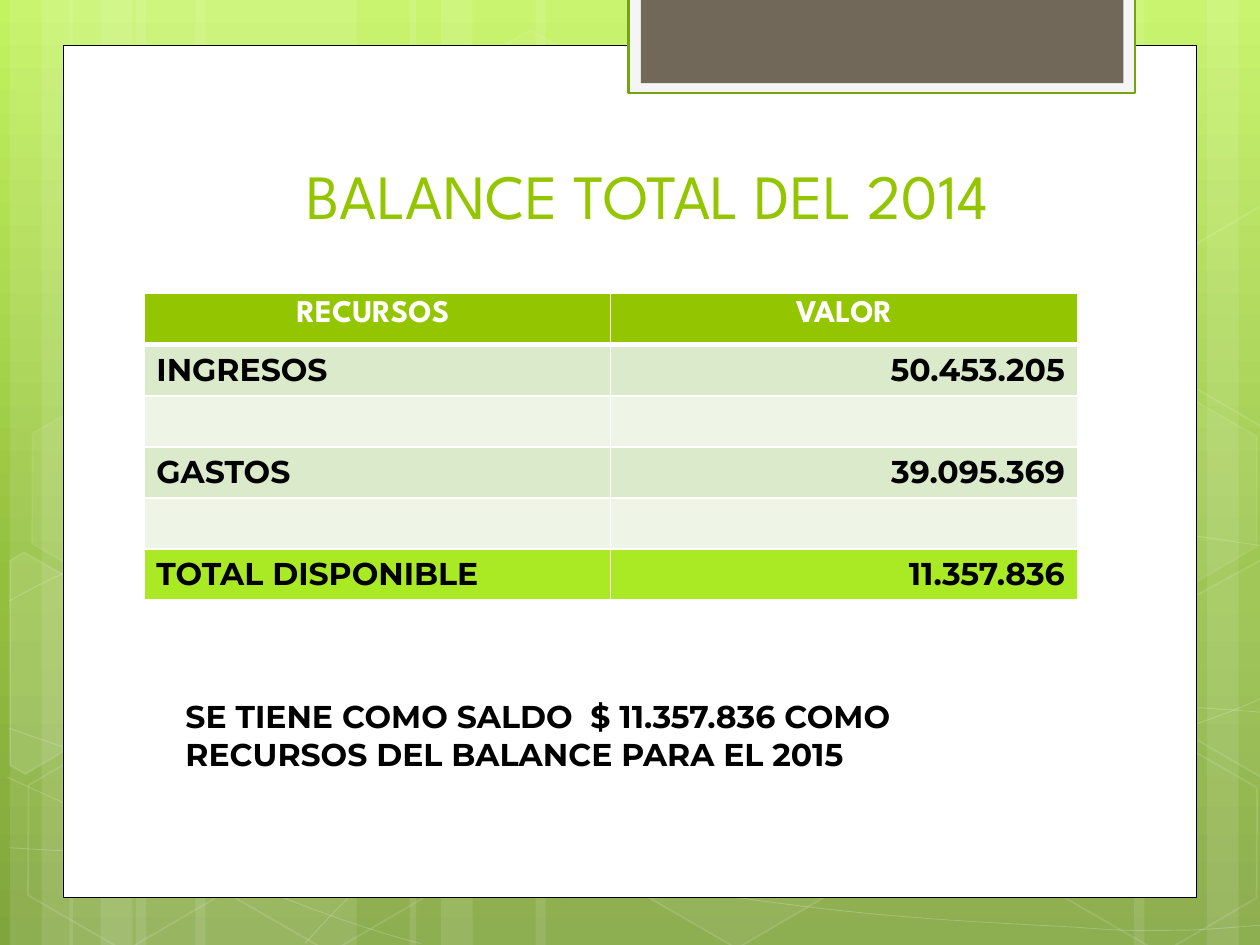
from copy import deepcopy
from math import cos, radians, sin

from lxml import etree
from pptx import Presentation, util as u
from pptx.dml.color import RGBColor
from pptx.enum import shapes, text
from pptx.oxml.ns import qn

WHITE, BLACK, GREEN = "FFFFFF", "000000", "94C600"
HEADING, BODY = "League Spartan", "Montserrat"
RECT, HEXAGON = shapes.MSO_SHAPE.RECTANGLE, shapes.MSO_SHAPE.HEXAGON
LEFT, CENTER, RIGHT = text.PP_ALIGN.LEFT, text.PP_ALIGN.CENTER, text.PP_ALIGN.RIGHT
TILT = 30

BACKGROUND = [(0, "C3F35F"), (0.62, "93BF3F"), (1, "81A53E")]
# left, width
BANDS = [(2.74, 4.45), (0.2, 1.27), (0.84, 2.11), (3.94, 4.45), (1.4, 1.27), (2.03, 2.11),
         (18.62, 4.45), (24.33, 1.27), (22.86, 2.11), (10.8, 7.82), (8.26, 1.27), (8.89, 2.11)]
# Bezier chains: a start point, then two controls and an end for each segment
CURVES = [
    [(0.18, 17.09), (1.55, 17.17), (2.92, 17.25), (4.83, 17.22),
     (6.73, 17.2), (9.09, 17.15), (11.63, 16.89), (14.17, 16.64), (17.78, 16.15), (20.12, 15.67),
     (22.43, 15.19), (24.82, 14.43), (25.58, 13.99)],
    [(0.18, 12.12), (0.91, 11.71), (1.65, 11.33), (3.07, 10.95),
     (4.52, 10.57), (6.58, 10.01), (8.81, 9.83), (11.07, 9.65), (13.82, 9.63), (16.61, 9.83),
     (19.41, 10.03), (24.05, 10.82), (25.58, 11.02)],
    [(0.15, 15.67), (3.23, 17.07), (6.27, 18.47), (8.48, 19.02)],
    [(0.18, 14.68), (0.97, 14.96), (1.78, 15.24), (3.25, 15.65),
     (4.72, 16.03), (6.93, 16.66), (9.07, 17.09), (11.18, 17.53), (13.84, 17.98), (15.95, 18.24),
     (18.06, 18.52), (20.32, 18.62), (21.67, 18.69), (22.99, 18.8), (23.34, 18.75), (24, 18.75),
     (24.66, 18.72), (25.12, 18.67), (25.58, 18.64)],
    [(6.15, 19.02), (6.6, 18.52), (7.06, 18.01), (7.67, 17.55),
     (8.28, 17.09), (9.14, 16.59), (9.86, 16.23), (10.57, 15.88), (11, 15.72), (11.94, 15.47),
     (12.85, 15.21), (14.55, 14.86), (15.44, 14.68), (16.36, 14.5), (16.48, 14.5), (17.27, 14.45),
     (18.06, 14.38), (19.3, 14.3), (20.17, 14.27), (21.06, 14.25), (22.5, 14.27), (22.5, 14.27),
     (22.5, 14.27), (24.21, 14.27), (24.21, 14.27), (24.66, 14.3), (25.1, 14.33), (25.32, 14.35),
     (25.55, 14.38), (25.48, 14.35), (25.55, 14.38)],
]
# left, top, fill opacity, line opacity
HEXAGONS = [(8.48, 0.91, 4, 8), (12.62, 14.96, 6, 12), (0.28, 15.01, 0, 12), (0.36, 7.92, 7, 8),
            (4.42, 15.04, 0, 12), (19.13, 11.51, 10, 12), (21.18, 15.06, 0, 12),
            (21.18, 7.98, 7, 8)]
# fill opacity, centre of rotation, corners after the tilt
CUT_HEXAGONS = [
    (10, (0.91, 13.59), [(0.2, 11.3), (0.48, 11.13), (2.44, 12.24), (2.41, 14.48), (0.51, 15.6),
                         (0.2, 15.42)]),
    (4, (25.02, 13.21), [(23.52, 12.32), (25.43, 11.28), (25.63, 11.33), (25.63, 15.57),
                         (25.45, 15.67), (23.52, 14.55)]),
    (0, (25.02, 6.12), [(23.52, 5.26), (25.43, 4.14), (25.65, 4.27), (25.63, 8.51), (25.45, 8.61),
                        (23.52, 7.49)]),
]
# row fill, label, value
ROWS = [(GREEN, "RECURSOS ", "VALOR"), ("DCEACC", "INGRESOS", "50.453.205"), ("EEF5E7", "", ""),
        ("DCEACC", "GASTOS", "39.095.369"), ("EEF5E7", "", ""),
        ("AAEA25", "TOTAL DISPONIBLE", "11.357.836")]


def rgb(color):
    return RGBColor.from_string(color)


def paint(fill, color, opacity=100):
    """Fill with a solid colour; opacity is in percent and 0 means no fill."""
    if not color or not opacity:
        fill.background()
        return
    fill.solid()
    fill.fore_color.rgb = rgb(color)
    if opacity < 100:
        clr = fill._xPr.find(".//" + qn("a:srgbClr"))
        etree.SubElement(clr, qn("a:alpha"), val=str(opacity * 1000))


def style(sp, fill, fill_opacity=100, line=None, width=1, line_opacity=100):
    sp.shadow.inherit = False
    paint(sp.fill, fill, fill_opacity)
    paint(sp.line.fill, line, line_opacity)
    if line:
        sp.line.width = u.Pt(width)


def add_shape(parent, kind, left, top, width, height):
    return parent.shapes.add_shape(kind, u.Cm(left), u.Cm(top), u.Cm(width), u.Cm(height))


def add_outline(parent, points, close):
    points = [(u.Cm(x), u.Cm(y)) for x, y in points]
    builder = parent.shapes.build_freeform(*points[0])
    builder.add_line_segments(points[1:], close=close)
    return builder.convert_to_shape()


def add_curve(parent, chain):
    """Turn each three line segments of an outline into one Bezier segment."""
    sp = add_outline(parent, chain, False)
    path = sp.element.find(".//" + qn("a:path"))
    lines = path.findall(qn("a:lnTo"))
    for i in range(0, len(lines), 3):
        bezier = etree.SubElement(path, qn("a:cubicBezTo"))
        for line in lines[i:i + 3]:
            bezier.append(line[0])
            path.remove(line)
    return sp


def untilt(point, centre):
    dx, dy = point[0] - centre[0], point[1] - centre[1]
    c, k = cos(radians(TILT)), sin(radians(TILT))
    return centre[0] + dx * c + dy * k, centre[1] - dx * k + dy * c


def add_run(p, words, size, font, color, bold=False):
    r = p.add_run()
    r.text = words
    r.font.size, r.font.name, r.font.bold = u.Pt(size), font, bold
    r.font.color.rgb = rgb(color)


def set_background(s):
    fill = s.background.fill
    fill.gradient()
    fill.gradient_angle = 270
    stops = s.element.find(".//" + qn("a:gsLst"))
    stops.append(deepcopy(stops[0]))
    for stop, (position, color) in zip(fill.gradient_stops, BACKGROUND):
        stop.position = position
        stop.color.rgb = rgb(color)


def add_decoration(s):
    group = s.shapes.add_group_shape()
    for left, width in BANDS:
        style(add_shape(group, RECT, left, 0, width, 19.05), WHITE, 10)
    for chain in CURVES:
        style(add_curve(group, chain), None, 0, WHITE, 0.5, 20)
    for left, top, fill_opacity, line_opacity in HEXAGONS:
        sp = add_shape(group, HEXAGON, left, top, 4.45, 3.86)
        sp.adjustments[0] = 0.285
        sp.rotation = TILT
        style(sp, WHITE, fill_opacity, WHITE, 1, line_opacity)
    for fill_opacity, centre, corners in CUT_HEXAGONS:
        sp = add_outline(group, [untilt(corner, centre) for corner in corners], True)
        sp.rotation = TILT
        style(sp, WHITE, fill_opacity, WHITE, 1, 12)


def add_frame(s):
    style(add_shape(s, RECT, 1.27, 0.91, 22.86, 17.19), WHITE, line=BLACK, width=0.5)
    style(add_shape(s, RECT, 12.67, -0.05, 10.21, 1.93), "F5F5F5", line="74A510", width=1.25)
    style(add_shape(s, RECT, 12.92, -0.05, 9.73, 1.73), "71685A")


def set_title(s, words):
    title = s.shapes.title
    s.shapes._spTree.append(title.element)  # bring in front of the frame
    title.left, title.top, title.width, title.height = map(u.Cm, (3.3, 3.41, 19.51, 1.4))
    tf = title.text_frame
    tf.auto_size = text.MSO_AUTO_SIZE.NONE
    tf.vertical_anchor = text.MSO_ANCHOR.BOTTOM
    p = tf.paragraphs[0]
    p.alignment = CENTER
    add_run(p, words, 36, HEADING, GREEN)


def set_border(cell, side, width):
    ln = etree.SubElement(cell._tc.get_or_add_tcPr(), qn("a:" + side), w=str(u.Pt(width)))
    fill = etree.SubElement(ln, qn("a:solidFill"))
    etree.SubElement(fill, qn("a:srgbClr"), val=WHITE)


def add_balance_table(s):
    frame = s.shapes.add_table(len(ROWS), 2, u.Cm(2.9), u.Cm(5.92), u.Cm(18.82), u.Cm(6.18))
    table = frame.table
    for i, (color, *words) in enumerate(ROWS):
        header = i == 0
        table.rows[i].height = u.Cm(1.03)
        for j, word in enumerate(words):
            cell = table.cell(i, j)
            for side in ("lnL", "lnR", "lnT", "lnB"):
                below_header = (i, side) in ((0, "lnB"), (1, "lnT"))
                set_border(cell, side, 3 if below_header else 1)
            paint(cell.fill, color)
            p = cell.text_frame.paragraphs[0]
            p.alignment = CENTER if header else (LEFT, RIGHT)[j]
            if word:
                add_run(p, word, 18, HEADING if header else BODY, WHITE if header else BLACK, True)


def add_note(s, words):
    sp = s.shapes.add_textbox(u.Cm(3.49), u.Cm(13.93), u.Cm(18.21), u.Cm(1.8))
    tf = sp.text_frame
    tf.word_wrap = True
    tf.auto_size = text.MSO_AUTO_SIZE.SHAPE_TO_FIT_TEXT
    add_run(tf.paragraphs[0], words, 18, BODY, BLACK, True)


def main():
    prs = Presentation()
    prs.slide_width, prs.slide_height = u.Cm(25.4), u.Cm(19.05)
    s = prs.slides.add_slide(prs.slide_layouts[5])
    set_background(s)
    add_decoration(s)
    add_frame(s)
    set_title(s, "BALANCE TOTAL DEL 2014")
    add_balance_table(s)
    add_note(s, "SE TIENE COMO SALDO  $ 11.357.836 COMO RECURSOS DEL BALANCE PARA EL 2015")
    prs.save("out.pptx")


if __name__ == "__main__":
    main()
